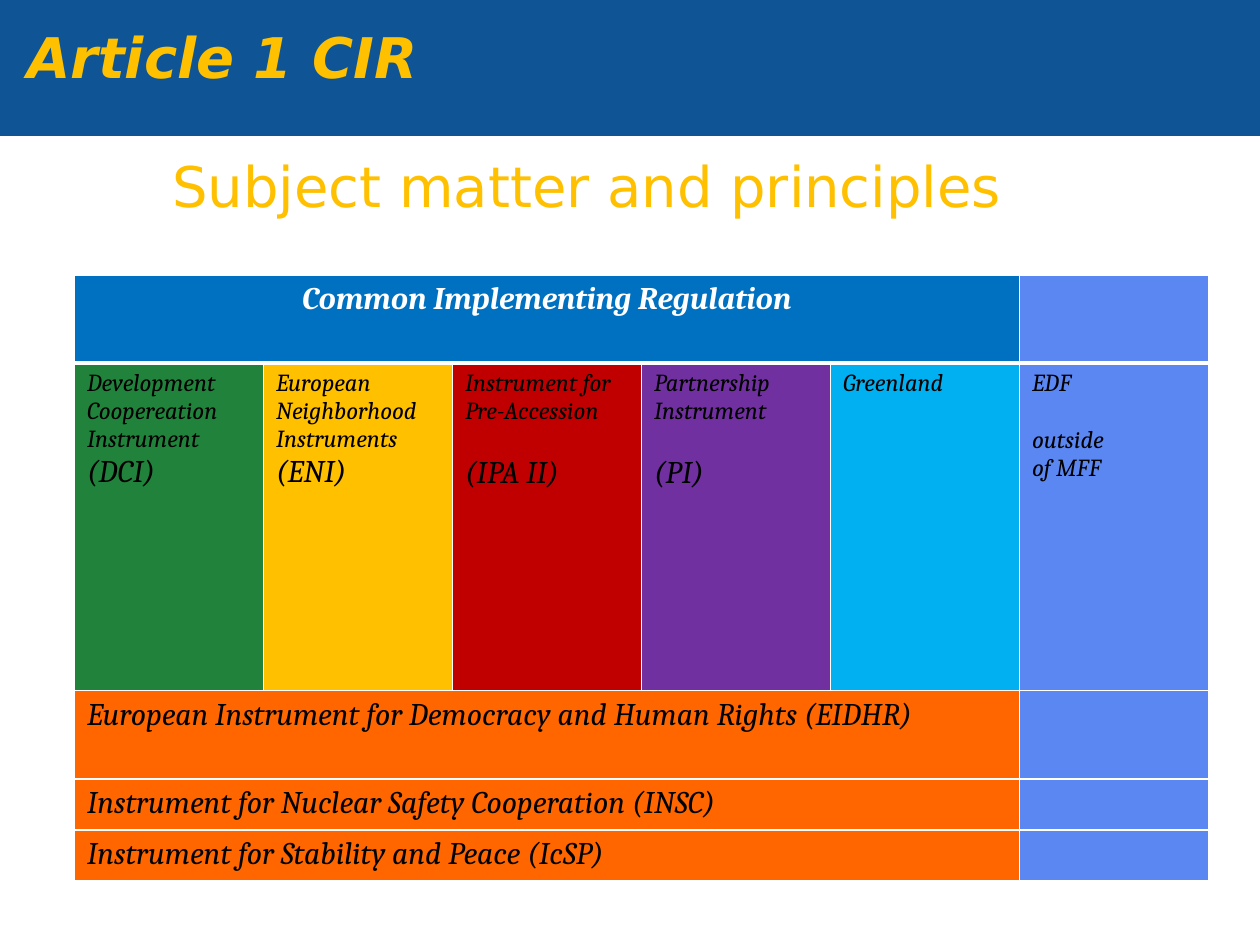
from lxml.etree import SubElement
from pptx import Presentation
from pptx.dml.color import RGBColor
from pptx.enum.shapes import MSO_SHAPE
from pptx.enum.text import MSO_ANCHOR, MSO_AUTO_SIZE, PP_ALIGN
from pptx.oxml.ns import qn
from pptx.util import Cm, Pt

BAND, GOLD, WHITE, BLACK = "0F5494", "FFC000", "FFFFFF", "000000"
HEADER, OUTSIDE, ORANGE = "0070C0", "5B87F2", "FF6600"
HEADING = {"name": "DejaVu Sans", "size": Pt(32), "bold": False, "italic": False}
BODY = {"name": "Cambria", "size": Pt(18), "bold": False, "italic": True}
SMALL = {**BODY, "size": Pt(14)}
GAP = Pt(16.5)

ROW_HEIGHTS = [1.78, 6.6, 1.78, 1.03, 1.03]
INSTRUMENTS = [
    ("21833B", [("Development Coopereation", SMALL, 0), ("Instrument", SMALL, 0),
                ("(DCI)", BODY, 0)]),
    ("FFC000", [("European Neighborhood Instruments", SMALL, 0), ("(ENI)", BODY, 0)]),
    ("C00000", [("Instrument for Pre-Accession", SMALL, 0), ("(IPA II)", BODY, GAP)]),
    ("7030A0", [("Partnership Instrument", SMALL, 0), ("(PI)", BODY, GAP)]),
    ("00B0F0", [("Greenland", SMALL, 0)]),
    (OUTSIDE, [("EDF", SMALL, 0), ("outside", SMALL, GAP), ("of MFF", SMALL, 0)]),
]
SHARED = [
    "European Instrument for Democracy and Human Rights (EIDHR)",
    "Instrument for Nuclear Safety Cooperation (INSC)",
    "Instrument for Stability and Peace (IcSP)",
]


def rgb(color):
    return RGBColor.from_string(color)


def write(p, text, font, color, align=PP_ALIGN.LEFT, before=0):
    p.alignment = align
    p.space_before = Pt(0) if not before else before
    r = p.add_run()
    r.text = text
    for name, value in font.items():
        setattr(r.font, name, value)
    r.font.color.rgb = rgb(color)


def set_box(sp, left, top, width, height):
    sp.left, sp.top, sp.width, sp.height = (Cm(v) for v in (left, top, width, height))


def add_band(s, left, top, width, height):
    sp = s.shapes.add_shape(MSO_SHAPE.RECTANGLE, Cm(left), Cm(top), Cm(width), Cm(height))
    sp.shadow.inherit = False
    sp.fill.solid()
    sp.fill.fore_color.rgb = rgb(BAND)
    sp.line.color.rgb = rgb(BAND)
    sp.line.width = Pt(0.75)
    tb = s.shapes.add_textbox(Cm(left + 0.3), Cm(top + 0.33), Cm(8.64), Cm(1.63))
    tf = tb.text_frame
    tf.word_wrap = False
    tf.auto_size = MSO_AUTO_SIZE.SHAPE_TO_FIT_TEXT
    write(tf.paragraphs[0], "Article 1 CIR",
          {**HEADING, "bold": True, "italic": True}, GOLD)


def set_title(s, left, top, width, height):
    sp = s.shapes.title
    set_box(sp, left, top, width, height)
    tf = sp.text_frame
    tf.word_wrap = True
    tf.auto_size = MSO_AUTO_SIZE.NONE
    tf.vertical_anchor = MSO_ANCHOR.TOP
    write(tf.paragraphs[0], "Subject matter and principles", HEADING, GOLD,
          PP_ALIGN.CENTER)


def style_cell(cell, fill, bottom=1, top=1):
    tcPr = cell._tc.get_or_add_tcPr()
    for side, width in (("L", 1), ("R", 1), ("T", top), ("B", bottom)):
        ln = SubElement(tcPr, qn(f"a:ln{side}"), w=str(Pt(width)))
        SubElement(SubElement(ln, qn("a:solidFill")), qn("a:srgbClr"), val=WHITE)
    cell.fill.solid()
    cell.fill.fore_color.rgb = rgb(fill)


def fill_cell(cell, lines, color=BLACK, align=PP_ALIGN.LEFT):
    tf = cell.text_frame
    for i, (text, font, before) in enumerate(lines):
        p = tf.add_paragraph() if i else tf.paragraphs[0]
        write(p, text, font, color, align, before)


def add_instruments(s, left, top, width):
    n_rows, n_cols = len(ROW_HEIGHTS), len(INSTRUMENTS)
    table = s.shapes.add_table(n_rows, n_cols, Cm(left), Cm(top), Cm(width),
                               Cm(sum(ROW_HEIGHTS))).table
    table.first_row = table.horz_banding = False
    for col in table.columns:
        col.width = Cm(width / n_cols)
    for row, height in zip(table.rows, ROW_HEIGHTS):
        row.height = Cm(height)

    for i in range(n_rows):
        for j, (color, _) in enumerate(INSTRUMENTS):
            wide = HEADER if i == 0 else ORANGE
            fill = color if i == 1 or j == n_cols - 1 else wide
            style_cell(table.cell(i, j), fill, 3 if i == 0 else 1, 3 if i == 1 else 1)
        if i != 1:
            table.cell(i, 0).merge(table.cell(i, n_cols - 2))

    fill_cell(table.cell(0, 0),
              [("Common Implementing Regulation", {**BODY, "bold": True}, 0)],
              WHITE, PP_ALIGN.CENTER)
    for j, (_, lines) in enumerate(INSTRUMENTS):
        fill_cell(table.cell(1, j), lines)
    for i, text in enumerate(SHARED, 2):
        fill_cell(table.cell(i, 0), [(text, BODY, 0)])


def main():
    prs = Presentation()
    prs.slide_width, prs.slide_height = Cm(25.4), Cm(19.05)
    s = prs.slides.add_slide(prs.slide_layouts[5])
    add_band(s, 0, 0, 25.4, 2.74)
    set_title(s, 0.41, 2.92, 22.86, 2.59)
    add_instruments(s, 1.5, 5.54, 22.86)
    prs.save("out.pptx")


if __name__ == "__main__":
    main()
